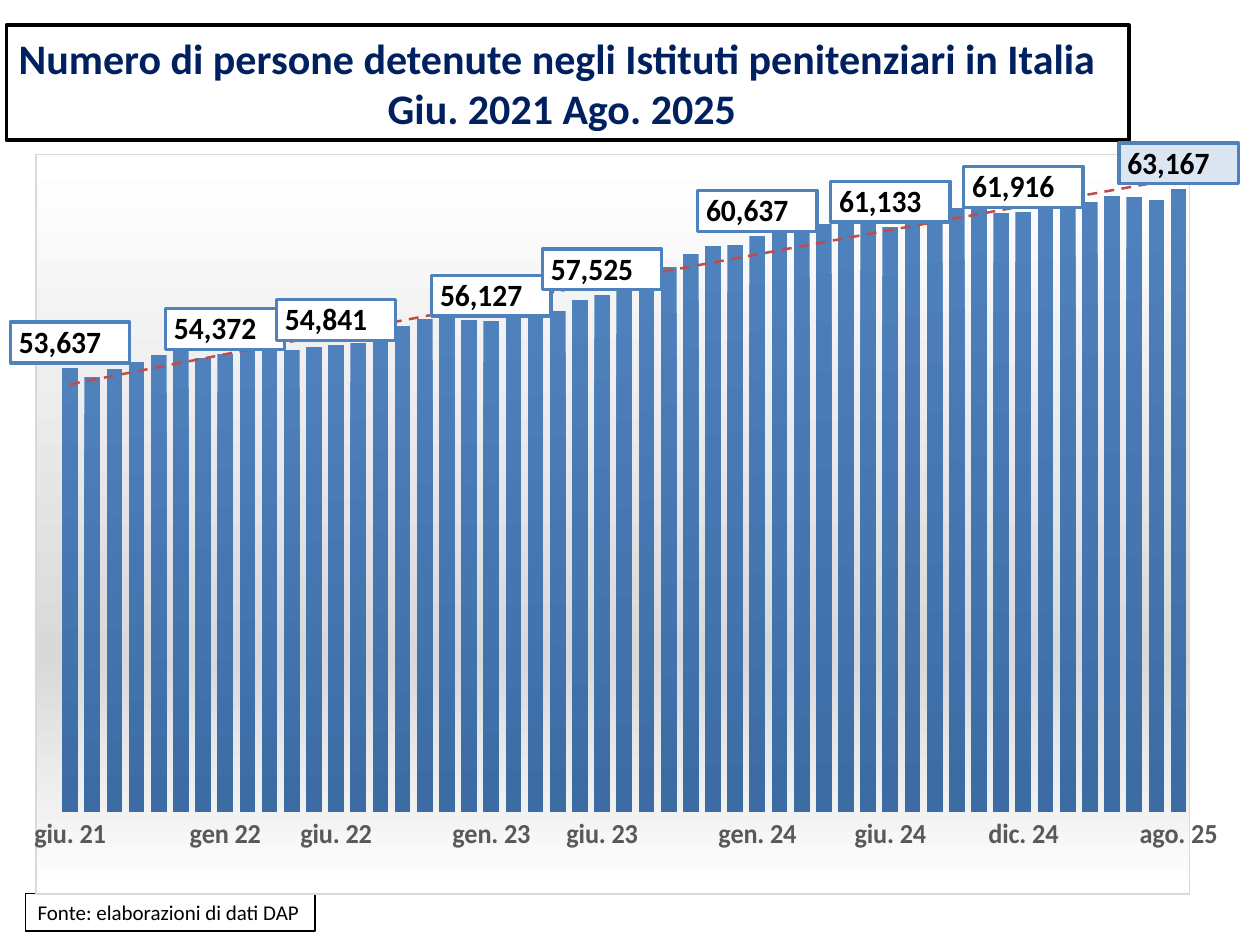
from lxml.etree import fromstring
from pptx import Presentation
from pptx.chart.data import CategoryChartData
from pptx.dml.color import RGBColor
from pptx.enum.chart import XL_CHART_TYPE as ChartType, XL_TICK_MARK as TickMark
from pptx.enum.shapes import MSO_SHAPE as Shape
from pptx.enum.text import MSO_AUTO_SIZE as AutoSize, PP_ALIGN as Align
from pptx.util import Inches, Pt

# Content
TITLE = ["Numero di persone detenute negli Istituti penitenziari in Italia",
         " Giu. 2021 Ago. 2025"]
SOURCE = ["Fonte: elaborazioni di dati DAP"]
DETAINEES = [
    53637, 53129, 53557, 53930, 54307, 54593, 54134, 54372, 54635, 54609,
    54595, 54771, 54841, 54979, 55637, 55835, 56225, 56524, 56196, 56127,
    56319, 56605, 56674, 57230, 57525, 57749, 58428, 58987, 59715, 60116,
    60166, 60637, 60924, 61049, 61297, 61547, 61480, 61133, 61758, 61862,
    62110, 62464, 61861, 61916, 62165, 62281, 62445, 62761, 62728, 62569, 63167]
MONTHS = {0: "giu. 21", 7: "gen 22", 12: "giu. 22", 19: "gen. 23", 24: "giu. 23",
          31: "gen. 24", 37: "giu. 24", 43: "dic. 24", 50: "ago. 25"}
LAST = len(DETAINEES) - 1

# Formats
TITLE_FONT = {"name": "Calibri", "size": Pt(24), "bold": True}
SOURCE_FONT = {"name": "Calibri", "size": Pt(12), "bold": False}
CHART_FONT = {"name": "Calibri", "size": Pt(11)}
AXIS_FONT = {"name": "Calibri", "size": Pt(16), "bold": True}
NUMBER_FORMAT = r'_-* #,##0\ _€_-;\-* #,##0\ _€_-;_-* "-"?'
NAMESPACES = ('xmlns:c="http://schemas.openxmlformats.org/drawingml/2006/chart" '
              'xmlns:a="http://schemas.openxmlformats.org/drawingml/2006/main"')


def color(value):
    return RGBColor.from_string(value)


def style_font(font, settings, font_color):
    for name, value in settings.items():
        setattr(font, name, value)
    font.color.rgb = color(font_color)


def add_box(slide, place, lines, settings, font_color, line_width):
    shape = slide.shapes.add_shape(Shape.RECTANGLE, *map(Inches, place))
    shape.shadow.inherit = False
    shape.fill.solid()
    shape.fill.fore_color.rgb = color("FFFFFF")
    shape.line.color.rgb = color("000000")
    shape.line.width = Pt(line_width)
    frame = shape.text_frame
    frame.word_wrap = False
    frame.auto_size = AutoSize.SHAPE_TO_FIT_TEXT
    for index, line in enumerate(lines):
        paragraph = frame.add_paragraph() if index else frame.paragraphs[0]
        paragraph.alignment = Align.CENTER if index else Align.LEFT
        run = paragraph.add_run()
        run.text = line
        style_font(run.font, settings, font_color)


def solid(value):
    return f'<a:solidFill><a:srgbClr val="{value}"/></a:solidFill>'


def gradient(stops):
    marks = "".join(f'<a:gs pos="{position * 1000}"><a:srgbClr val="{value}"/></a:gs>'
                    for position, value in stops)
    return (f'<a:gradFill {NAMESPACES}><a:gsLst>{marks}</a:gsLst>'
            '<a:lin ang="5400000" scaled="0"/></a:gradFill>')


def outline(value, points, dash="solid"):
    return f'<a:ln w="{Pt(points)}">{solid(value)}<a:prstDash val="{dash}"/></a:ln>'


def chart_xml(tag, body):
    return fromstring(f"<c:{tag} {NAMESPACES}>{body}</c:{tag}>")


def show_flags(value):
    flags = {"LegendKey": 0, "Val": value, "CatName": 0, "SerName": 0,
             "Percent": 0, "BubbleSize": 0}
    return "".join(f'<c:show{name} val="{flag}"/>' for name, flag in flags.items())


def label_xml(index):
    fill = "DCE6F2" if index == LAST else "FFFFFF"
    number_format = NUMBER_FORMAT.replace('"', "&quot;")
    return f'''<c:dLbl><c:idx val="{index}"/>
      <c:numFmt formatCode="{number_format}" sourceLinked="0"/>
      <c:spPr>{solid(fill)}{outline("4F81BD", 2)}</c:spPr>
      <c:txPr><a:bodyPr/><a:p><a:pPr><a:defRPr sz="1800" b="1">{solid("000000")}
        <a:latin typeface="Calibri"/></a:defRPr></a:pPr></a:p></c:txPr>
      <c:dLblPos val="outEnd"/>{show_flags(1)}</c:dLbl>'''


def add_detainee_chart(slide):
    data = CategoryChartData(number_format=NUMBER_FORMAT)
    data.categories = [MONTHS.get(index, "") for index in range(len(DETAINEES))]
    data.add_series("Series 1", DETAINEES)
    place = map(Inches, (0.07, 1.12, 9.77, 5.98))
    chart = slide.shapes.add_chart(ChartType.COLUMN_CLUSTERED, *place, data).chart
    chart.has_title = chart.has_legend = False
    style_font(chart.font, CHART_FONT, "000000")

    # Axes
    months = chart.category_axis
    months.major_tick_mark = months.minor_tick_mark = TickMark.NONE
    months.format.line.fill.background()
    style_font(months.tick_labels.font, AXIS_FONT, "595959")
    months._element.find("{*}noMultiLvlLbl").addprevious(
        fromstring(f'<c:tickLblSkip {NAMESPACES} val="1"/>'))
    values = chart.value_axis
    values.visible = values.has_major_gridlines = False
    values.minimum_scale, values.maximum_scale = 30000, 65000

    # Columns, labels and trend line
    plot = chart.plots[0]
    plot.gap_width = 41
    plot.vary_by_categories = False
    series = plot.series[0]
    series.invert_if_negative = False
    series_xml = series._element
    series_xml.get_or_add_spPr().append(
        fromstring(gradient([(0, "4F81BD"), (100, "3D6CA4")])))
    categories = series_xml.find("{*}cat")
    labels = "".join(label_xml(index) for index in MONTHS)
    categories.addprevious(chart_xml("dLbls", labels + show_flags(0)))
    categories.addprevious(chart_xml("trendline", f'''
      <c:spPr>{outline("BF4C48", 1.5, "dash")}</c:spPr>
      <c:trendlineType val="poly"/><c:order val="2"/>
      <c:dispRSqr val="0"/><c:dispEq val="0"/>'''))

    # Chart background and plot position
    chart_space = chart._chartSpace
    background = gradient([(0, "FFFFFF"), (68, "D9D9D9"), (100, "FFFFFF")])
    chart_space.find("{*}chart").addnext(
        chart_xml("spPr", background + outline("D9D9D9", 0.75)))
    plot_area = chart_space.find(".//{*}plotArea")
    for layout in plot_area.findall("{*}layout"):
        plot_area.remove(layout)
    sizes = {"x": 0.02, "y": 0, "w": 0.98, "h": 0.89}
    plot_area.insert(0, chart_xml(
        "layout", '<c:manualLayout><c:layoutTarget val="inner"/>'
        '<c:xMode val="edge"/><c:yMode val="edge"/>'
        + "".join(f'<c:{name} val="{size}"/>' for name, size in sizes.items())
        + "</c:manualLayout>"))


def main():
    presentation = Presentation()
    presentation.slide_width, presentation.slide_height = Inches(10), Inches(7.5)
    slide = presentation.slides.add_slide(presentation.slide_layouts[6])
    add_box(slide, (0.05, 0.2, 8.91, 0.91), TITLE, TITLE_FONT, "002060", 2)
    add_box(slide, (0.2, 7.09, 2.3, 0.3), SOURCE, SOURCE_FONT, "000000", 0.75)
    add_detainee_chart(slide)
    presentation.save("out.pptx")


if __name__ == "__main__":
    main()
